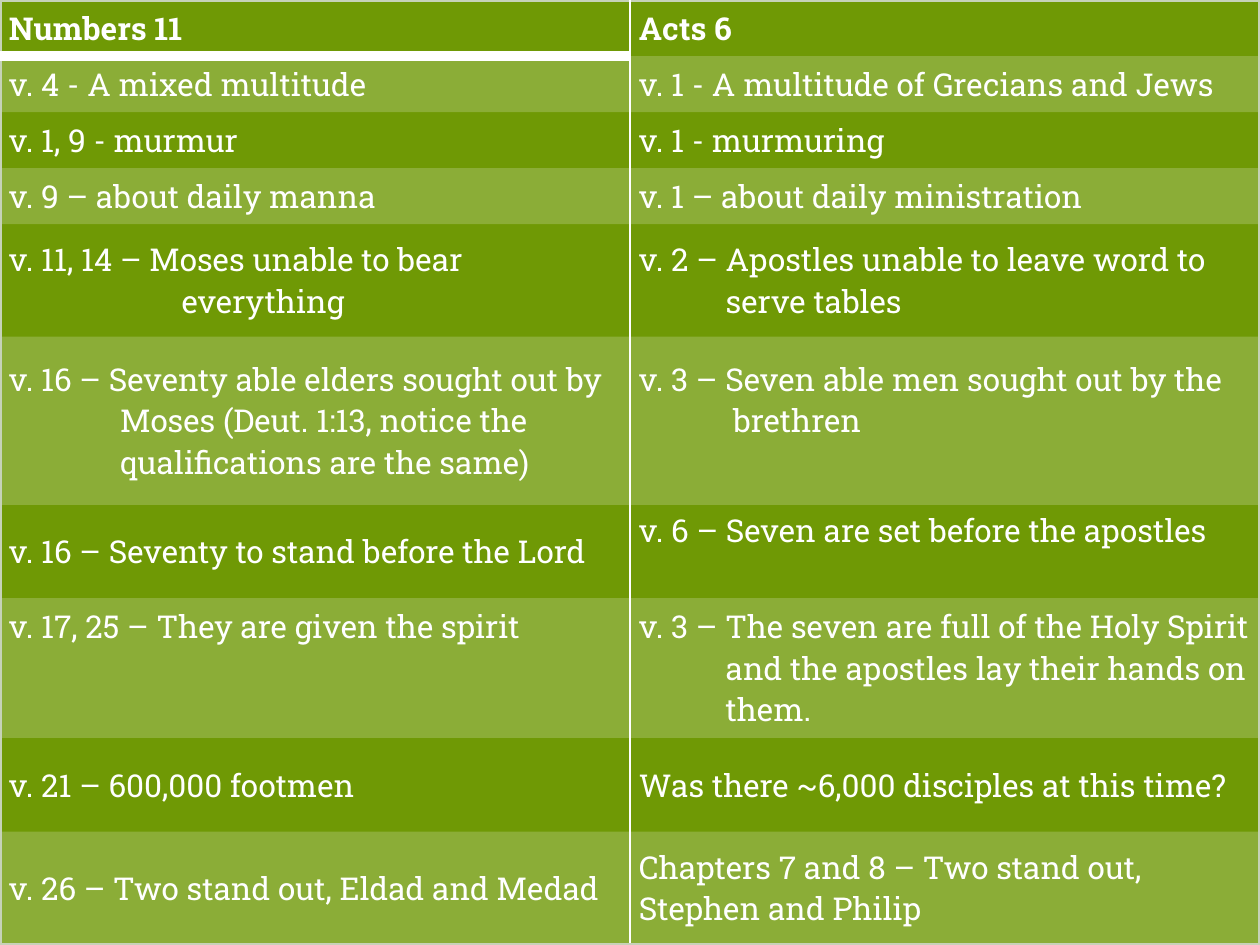
from lxml.etree import SubElement
from pptx import Presentation
from pptx.dml.color import RGBColor
from pptx.enum.text import MSO_ANCHOR as Anchor
from pptx.oxml import parse_xml
from pptx.oxml.ns import nsdecls, qn
from pptx.util import Cm, Pt

COLORS = {"green": "6F9905", "white": "FFFFFF", "edge": "C6D2B8"}
FONT = "Roboto Slab"
NO_STYLE = "{2D5ABB26-0587-4C30-8999-92F81FD0307C}"
LINE_HEIGHT = 0.84

# Row height in cm, then for each cell: text, hanging indent in cm, free lines below
ROWS = [
    (1.13, ("Numbers 11", 0, 0), ("Acts 6", 0, 0)),
    (1.13, ("v. 4 - A mixed multitude", 0, 0),
     ("v. 1 - A multitude of Grecians and Jews", 0, 0)),
    (1.13, ("v. 1, 9 - murmur", 0, 0), ("v. 1 - murmuring", 0, 0)),
    (1.13, ("v. 9 – about daily manna", 0, 0),
     ("v. 1 – about daily ministration", 0, 0)),
    (2.27, ("v. 11, 14 – Moses unable to bear everything", 3.48, 0),
     ("v. 2 – Apostles unable to leave word to serve tables", 1.75, 0)),
    (3.39, ("v. 16 – Seventy able elders sought out by Moses (Deut. 1:13, "
            "notice the qualifications are the same)", 2.24, 0),
     ("v. 3 – Seven able men sought out by the brethren", 1.9, 1)),
    (1.88, ("v. 16 – Seventy to stand before the Lord", 2.24, 0),
     ("v. 6 – Seven are set before the apostles", 0, 1)),
    (2.82, ("v. 17, 25 – They are given the spirit", 0, 2),
     ("v. 3 – The seven are full of the Holy Spirit and the apostles lay "
      "their hands on them.", 1.75, 0)),
    (1.89, ("v. 21 – 600,000 footmen", 0, 0),
     ("Was there ~6,000 disciples at this time?", 0, 0)),
    (2.27, ("v. 26 – Two stand out, Eldad and Medad", 2.24, 0),
     ("Chapters 7 and 8 – Two stand out, Stephen and Philip", 0, 0)),
]


def rgb(name):
    return RGBColor.from_string(COLORS[name])


def write(cell, text, *, size=18, color="white", bold=False, hanging=0, free_lines=0):
    cell.vertical_anchor = Anchor.MIDDLE
    cell.margin_left = cell.margin_right = Cm(0.18)
    cell.margin_top = 0
    cell.margin_bottom = Cm(free_lines * LINE_HEIGHT)
    para = cell.text_frame.paragraphs[0]
    if hanging:
        props = para._p.get_or_add_pPr()
        props.set("marL", str(Cm(hanging)))
        props.set("indent", str(-Cm(hanging)))
    span = para.add_run()
    span.text = text
    span.font.name, span.font.size, span.font.bold = FONT, Pt(size), bold
    span.font.color.rgb = rgb(color)


def shade(cell, banded):
    """Lay translucent white over a banded cell; leave the others clear."""
    if not banded:
        cell.fill.background()
        return
    cell.fill.solid()
    cell.fill.fore_color.rgb = rgb("white")
    color = cell._tc.tcPr.find(".//" + qn("a:srgbClr"))
    SubElement(color, qn("a:alpha"), val="20000")


def set_borders(cell, borders):
    """Draw borders given as (side, colour, points) in the order L, R, T, B."""
    props = cell._tc.get_or_add_tcPr()
    for place, (side, color, points) in enumerate(borders):
        props.insert(place, parse_xml(
            f'<a:ln{side} {nsdecls("a")} w="{Pt(points)}"><a:solidFill>'
            f'<a:srgbClr val="{COLORS[color]}"/></a:solidFill></a:ln{side}>'))


def borders_at(row, column):
    outer, inner = ("edge", 2), ("white", 1)
    borders = [("L", *(inner if column else outer)),
               ("R", *(outer if column else inner))]
    if row == 0:
        borders.append(("T", *outer))
        if column == 0:
            borders.append(("B", "white", 6))
    elif row == len(ROWS) - 1:
        borders.append(("B", *outer))
    return borders


def add_comparison(page, left, top, width, height):
    table = page.shapes.add_table(len(ROWS), 2, left, top, width, height).table
    table.first_row = table.horz_banding = False
    table._tbl.tblPr.find(qn("a:tableStyleId")).text = NO_STYLE
    for column in table.columns:
        column.width = width // 2
    for row, (row_height, *entries) in enumerate(ROWS):
        table.rows[row].height = Cm(row_height)
        for column, (text, hanging, free_lines) in enumerate(entries):
            cell = table.cell(row, column)
            write(cell, text, bold=row == 0, hanging=hanging, free_lines=free_lines)
            shade(cell, banded=row % 2 == 1)
            set_borders(cell, borders_at(row, column))


def main():
    deck = Presentation()
    deck.slide_width, deck.slide_height = Cm(25.4), Cm(19.05)
    page = deck.slides.add_slide(deck.slide_layouts[6])
    page.background.fill.solid()
    page.background.fill.fore_color.rgb = rgb("green")
    add_comparison(page, 0, 0, deck.slide_width, deck.slide_height)
    deck.save("out.pptx")


if __name__ == "__main__":
    main()
